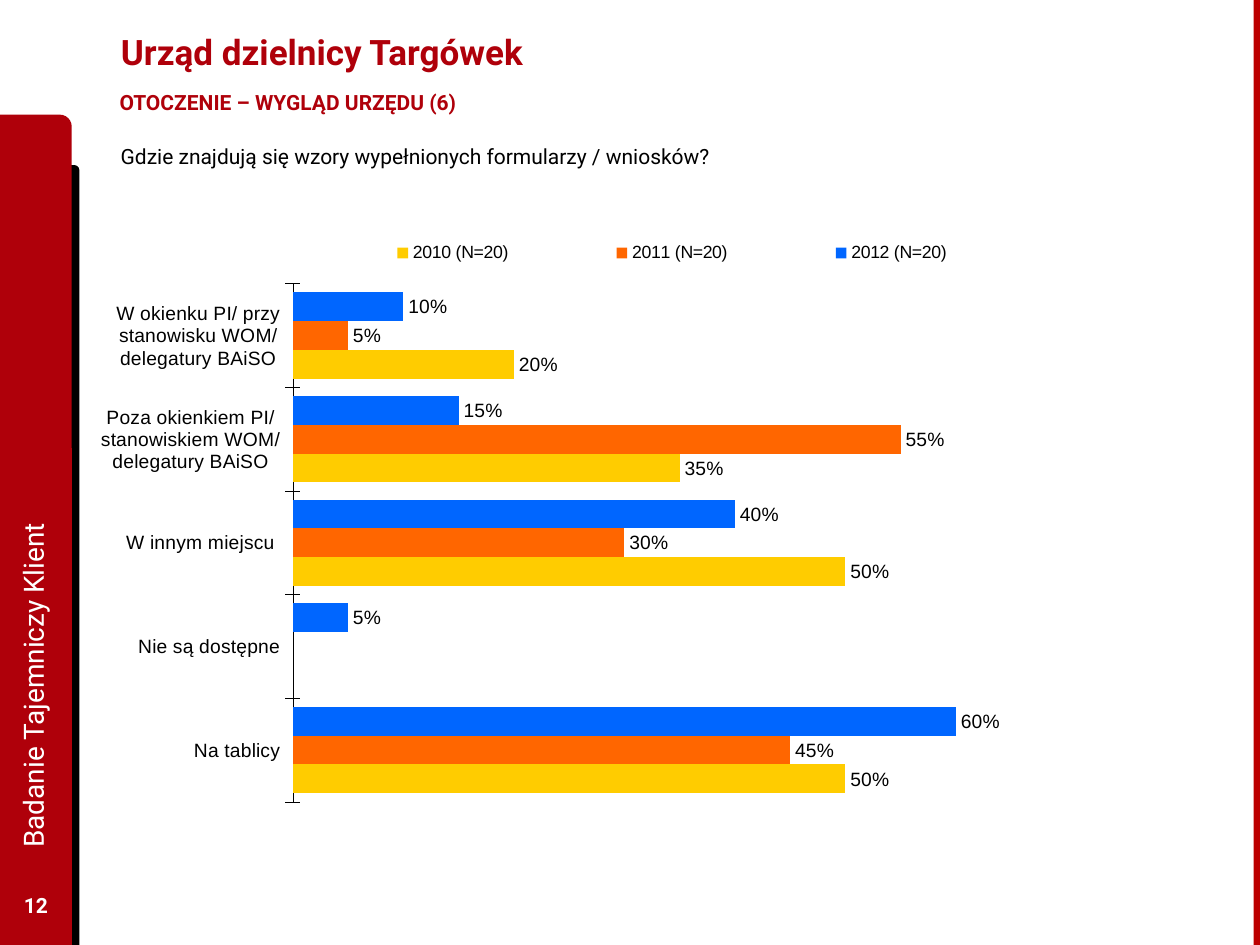
from dataclasses import dataclass

from lxml import etree
from pptx import Presentation
from pptx.chart.data import CategoryChartData
from pptx.dml.color import RGBColor
from pptx.enum.chart import XL_CHART_TYPE as ChartType
from pptx.enum.chart import XL_LABEL_POSITION as LabelPosition
from pptx.enum.chart import XL_LEGEND_POSITION as LegendPosition
from pptx.enum.chart import XL_TICK_MARK as TickMark
from pptx.enum.shapes import MSO_SHAPE as Preset
from pptx.enum.text import MSO_ANCHOR as Anchor
from pptx.enum.text import MSO_AUTO_SIZE as AutoSize
from pptx.enum.text import PP_ALIGN as Align
from pptx.oxml.ns import qn
from pptx.util import Inches, Pt

COLUMNS, ROWS = 100, 75
TITLE_ONLY = 5

CATEGORIES = [
    "W okienku PI/ przy stanowisku WOM/ delegatury BAiSO",
    "Poza okienkiem PI/ stanowiskiem WOM/ delegatury BAiSO",
    "W innym miejscu ",
    "Nie są dostępne",
    "Na tablicy",
]
SURVEYS = [
    ("2012 (N=20)", "0066FF", [0.10, 0.15, 0.40, 0.05, 0.60]),
    ("2011 (N=20)", "FF6600", [0.05, 0.55, 0.30, None, 0.45]),
    ("2010 (N=20)", "FFCC00", [0.20, 0.35, 0.50, None, 0.50]),
]


@dataclass(frozen=True)
class Theme:
    heading_font: str = "Roboto"
    chart_font: str = "Arial"
    red: str = "AF000A"
    edge_red: str = "BD0000"
    black: str = "000000"
    white: str = "FFFFFF"
    title_size: float = 20
    side_size: float = 16
    text_size: float = 12
    chart_size: float = 11
    legend_size: float = 10.1


def set_font(font, name, size, color, bold=False):
    font.name = name
    font.size = Pt(size)
    font.bold = bold
    font.color.rgb = RGBColor.from_string(color)


def write_text(shape, text, *, font, size, color, bold=False, align=Align.LEFT,
               anchor=Anchor.TOP, wrap=True, side_inset=0.1):
    frame = shape.text_frame
    frame.auto_size = AutoSize.NONE
    frame.word_wrap = wrap
    frame.vertical_anchor = anchor
    frame.margin_left = frame.margin_right = Inches(side_inset)
    paragraph = frame.paragraphs[0]
    paragraph.alignment = align
    run = paragraph.add_run()
    run.text = text
    set_font(run.font, font, size, color, bold)


def set_layout(element, target, x, y, width, height):
    layout = element.find(qn("c:layout"))
    if layout is None:
        layout = etree.Element(qn("c:layout"))
        position = 0 if target else 1
        element.insert(position, layout)
    for child in list(layout):
        layout.remove(child)
    manual = etree.SubElement(layout, qn("c:manualLayout"))
    settings = [("xMode", "edge"), ("yMode", "edge"),
                ("x", x), ("y", y), ("w", width), ("h", height)]
    if target:
        settings.insert(0, ("layoutTarget", target))
    for name, value in settings:
        etree.SubElement(manual, qn(f"c:{name}")).set("val", str(value))


class SlideBuilder:
    def __init__(self, presentation, theme):
        self.theme = theme
        self.column = presentation.slide_width / COLUMNS
        self.row = presentation.slide_height / ROWS
        layout = presentation.slide_layouts[TITLE_ONLY]
        self.slide = presentation.slides.add_slide(layout)

    def box(self, left, top, width, height):
        return (round(left * self.column), round(top * self.row),
                round(width * self.column), round(height * self.row))

    def title(self, text, *cells):
        shape = self.slide.shapes.title
        shape.left, shape.top, shape.width, shape.height = self.box(*cells)
        write_text(shape, text, font=self.theme.heading_font, size=self.theme.title_size,
                   color=self.theme.red, bold=True, anchor=Anchor.MIDDLE)

    def panel(self, preset, color, *cells):
        shape = self.slide.shapes.add_shape(preset, *self.box(*cells))
        shape.shadow.inherit = False
        shape.fill.solid()
        shape.fill.fore_color.rgb = RGBColor.from_string(color)
        shape.line.fill.background()

    def text(self, text, *cells, rotation=0, **style):
        shape = self.slide.shapes.add_textbox(*self.box(*cells))
        shape.rotation = rotation
        defaults = {"font": self.theme.heading_font, "size": self.theme.text_size,
                    "color": self.theme.black}
        write_text(shape, text, **(defaults | style))

    def bar_chart(self, categories, surveys, *cells):
        theme = self.theme
        data = CategoryChartData(number_format="0%")
        data.categories = categories
        for name, _, values in surveys:
            data.add_series(name, values)
        chart = self.slide.shapes.add_chart(
            ChartType.BAR_CLUSTERED, *self.box(*cells), data).chart
        chart.has_title = False
        set_font(chart.font, theme.chart_font, theme.chart_size, theme.black)

        plot = chart.plots[0]
        plot.gap_width, plot.overlap, plot.vary_by_categories = 60, 0, False
        for series, (_, color, _) in zip(plot.series, surveys):
            series.format.fill.solid()
            series.format.fill.fore_color.rgb = RGBColor.from_string(color)
            labels = series.data_labels
            labels.show_value = True
            labels.number_format, labels.number_format_is_linked = "0%", False
            labels.position = LabelPosition.OUTSIDE_END
            set_font(labels.font, theme.chart_font, theme.chart_size, theme.black)

        self.axes(chart)
        chart.has_legend = True
        legend = chart.legend
        legend.position, legend.include_in_layout = LegendPosition.TOP, False
        set_font(legend.font, theme.chart_font, theme.legend_size, theme.black)
        plot_area = chart.element.find(".//" + qn("c:plotArea"))
        set_layout(plot_area, "inner", 0.168, 0.089, 0.677, 0.91)
        set_layout(legend.element if hasattr(legend, "element") else
                   chart.element.find(".//" + qn("c:legend")),
                   None, 0.17, 0.0, 0.66, 0.07)

    def axes(self, chart):
        theme = self.theme
        category = chart.category_axis
        category.reverse_order = True
        category.major_tick_mark = TickMark.CROSS
        category.minor_tick_mark = TickMark.NONE
        category.format.line.width = Pt(0.25)
        category.format.line.color.rgb = RGBColor.from_string(theme.black)
        set_font(category.tick_labels.font, theme.chart_font, theme.chart_size, theme.black)
        value = chart.value_axis
        value.minimum_scale, value.maximum_scale = 0, 0.7
        value.has_major_gridlines = False
        value.visible = False


def main():
    theme = Theme()
    presentation = Presentation()
    presentation.slide_width, presentation.slide_height = Inches(10), Inches(7.5)
    builder = SlideBuilder(presentation, theme)

    builder.panel(Preset.ROUND_1_RECTANGLE, theme.black, 3.9, 13.1, 2.4, 61.9)
    builder.panel(Preset.ROUND_1_RECTANGLE, theme.red, 0, 9.1, 5.7, 65.9)
    builder.panel(Preset.RECTANGLE, theme.edge_red, 99.5, 0, 0.5, ROWS)

    builder.title("Urząd dzielnicy Targówek", 8.6, 0.5, 77.7, 7.2)
    builder.text("OTOCZENIE – WYGLĄD URZĘDU (6)", 7.5, 6.6, 38.5, 3.3,
                 color=theme.red, bold=True, wrap=False, side_inset=0.2)
    builder.text("Gdzie znajdują się wzory wypełnionych formularzy / wniosków?",
                 8.6, 10.9, 64.7, 3)
    builder.bar_chart(CATEGORIES, SURVEYS, 8, 18.5, 90.7, 45.2)
    builder.text("12", 0, 69.8, 5.7, 4, color=theme.white, bold=True,
                 align=Align.CENTER, anchor=Anchor.MIDDLE)
    builder.text("Badanie Tajemniczy Klient", -26.2, 36.9, 57.6, 5.1, rotation=270,
                 size=theme.side_size, color=theme.white, anchor=Anchor.MIDDLE)
    presentation.save("out.pptx")


if __name__ == "__main__":
    main()
